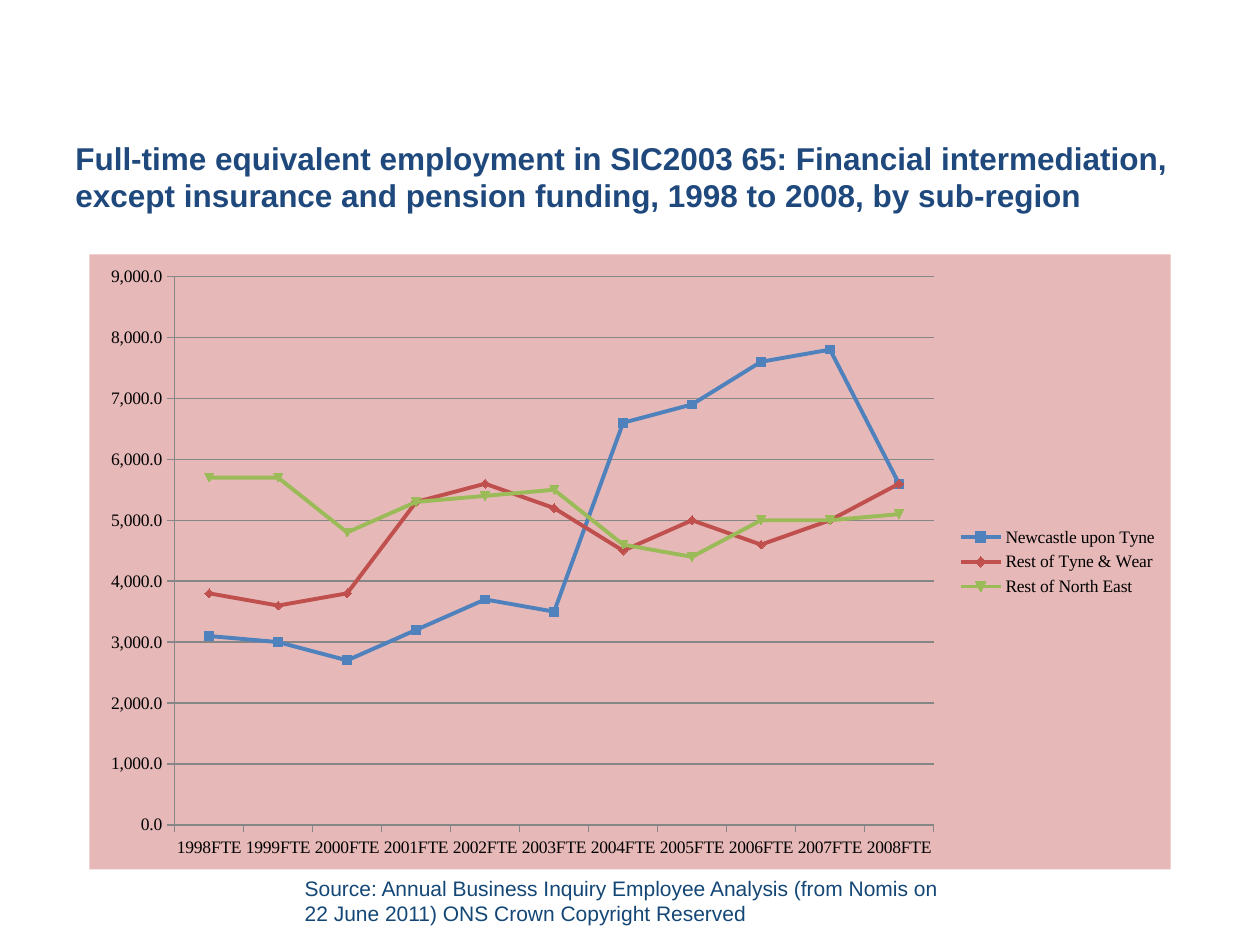
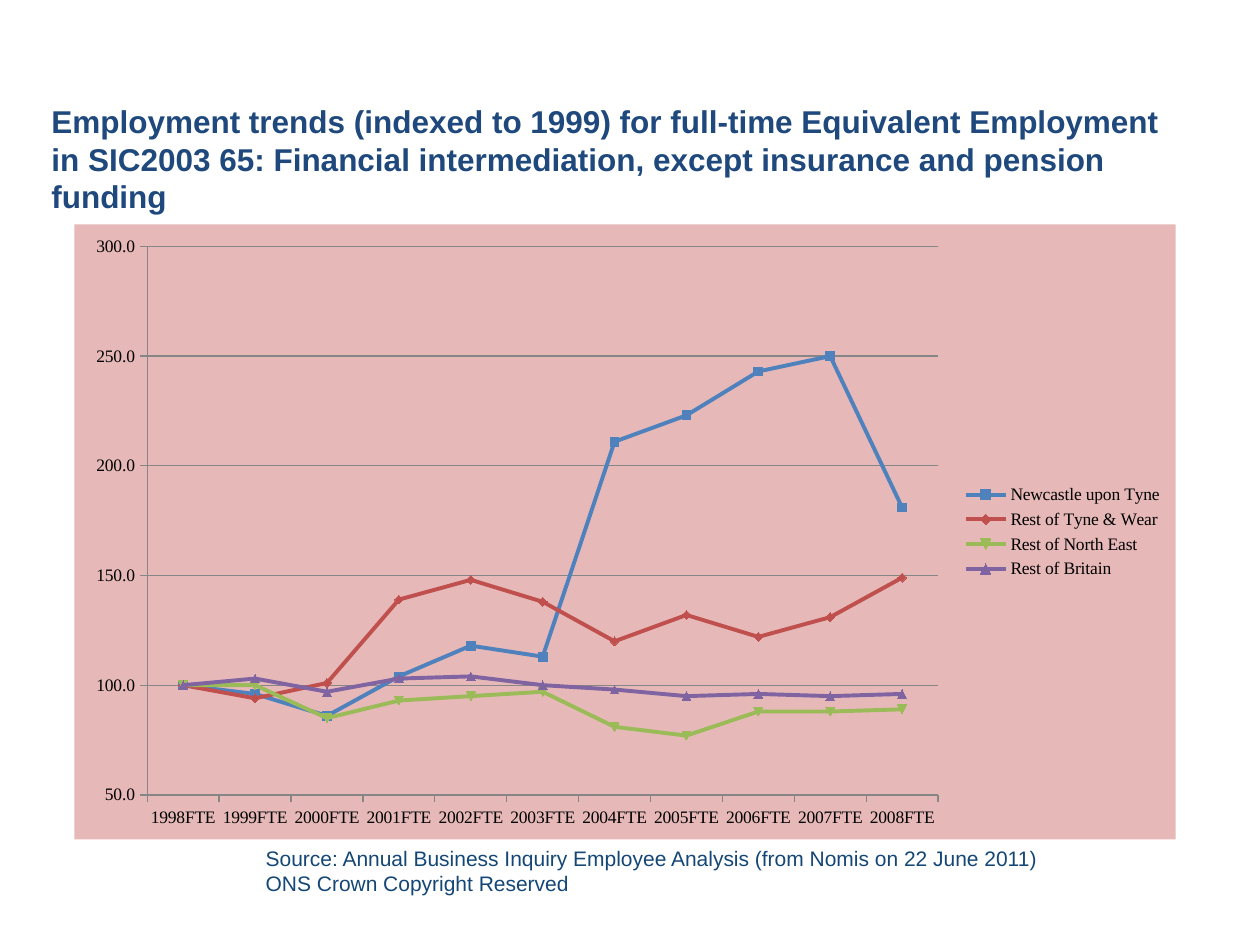
from dataclasses import dataclass
from typing import Any

from lxml import etree
from pptx import Presentation
from pptx import util as u
from pptx.chart import data as cd
from pptx.dml import color as col
from pptx.enum import chart as ce, text as te
from pptx.oxml import ns

Pt = u.Pt


@dataclass(frozen=True)
class Theme:
    title: str = "1F497D"
    source: str = "144776"
    ink: str = "000000"
    rule: str = "868686"
    panel: str = "E6B9B8"
    lines: tuple[str, ...] = ("4F81BD", "C0504D", "9BBB59", "8064A2")
    sans: str = "Arial"
    serif: str = "Times New Roman"
    head: int = 18
    note: int = 12
    label: int = 10


@dataclass(frozen=True)
class Box:
    left: float
    top: float
    width: float
    height: float

    def place(self) -> tuple[int, ...]:
        return tuple(Pt(n) for n in (self.left, self.top, self.width, self.height))


@dataclass(frozen=True)
class Page:
    title: str
    title_box: Box
    rows: tuple[tuple[int, ...], ...]
    chart_box: Box
    scale: dict[str, float]
    source: tuple[str, ...]
    source_box: Box


THEME = Theme()
YEARS = [f"{year}FTE" for year in range(1998, 2009)]
AREAS = ("Newcastle upon Tyne", "Rest of Tyne & Wear",
         "Rest of North East", "Rest of Britain")

PAGES = (
    Page(
        title="Full-time equivalent employment in SIC2003 65: Financial "
              "intermediation, except insurance and pension funding, "
              "1998 to 2008, by sub-region",
        title_box=Box(36, 75.6, 648, 90),
        rows=(
            (3100, 3000, 2700, 3200, 3700, 3500, 6600, 6900, 7600, 7800, 5600),
            (3800, 3600, 3800, 5300, 5600, 5200, 4500, 5000, 4600, 5000, 5600),
            (5700, 5700, 4800, 5300, 5400, 5500, 4600, 4400, 5000, 5000, 5100),
        ),
        chart_box=Box(51.1, 145.4, 617.8, 351.4),
        scale={},
        source=("Source: Annual Business Inquiry Employee Analysis (from Nomis on",
                "22 June 2011) ONS Crown Copyright Reserved"),
        source_box=Box(167, 496.8, 382.3, 36.7),
    ),
    Page(
        title="Employment trends (indexed to 1999) for full-time Equivalent "
              "Employment in SIC2003 65: Financial intermediation, except "
              "insurance and pension funding",
        title_box=Box(22.3, 54.7, 648, 76.3),
        rows=(
            (100, 96, 86, 104, 118, 113, 211, 223, 243, 250, 181),
            (100, 94, 101, 139, 148, 138, 120, 132, 122, 131, 149),
            (100, 100, 85, 93, 95, 97, 81, 77, 88, 88, 89),
            (100, 103, 97, 103, 104, 100, 98, 95, 96, 95, 96),
        ),
        chart_box=Box(42.5, 128.2, 629.3, 351.4),
        scale={"minimum_scale": 50, "maximum_scale": 300},
        source=("Source: Annual Business Inquiry Employee Analysis "
                "(from Nomis on 22 June 2011)",
                "ONS Crown Copyright Reserved"),
        source_box=Box(144.7, 479.5, 462.2, 36.7),
    ),
)


def apply(item: Any, values: dict[str, Any]) -> None:
    for name, value in values.items():
        setattr(item, name, value)


def set_font(font: Any, name: str, size: int, ink: str, bold: bool = False) -> None:
    apply(font, {"name": name, "size": Pt(size), "bold": bold})
    font.color.rgb = col.RGBColor.from_string(ink)


def add_text(slide: Any, box: Box, lines: tuple[str, ...],
             frame: dict[str, Any], font: dict[str, Any]) -> None:
    body = slide.shapes.add_textbox(*box.place()).text_frame
    apply(body, frame)
    body.text = "\n".join(lines)
    for para in body.paragraphs:
        set_font(para.font, THEME.sans, **font)


def area_props(fill: str | None) -> Any:
    """Make borderless chart area properties, clear if no fill is given."""
    props = etree.Element(ns.qn("c:spPr"))
    if fill:
        solid = etree.SubElement(props, ns.qn("a:solidFill"))
        etree.SubElement(solid, ns.qn("a:srgbClr"), val=fill)
    else:
        etree.SubElement(props, ns.qn("a:noFill"))
    line = etree.SubElement(props, ns.qn("a:ln"))
    etree.SubElement(line, ns.qn("a:noFill"))
    return props


def set_line(line: Any, ink: str, width: float) -> None:
    line.color.rgb = col.RGBColor.from_string(ink)
    line.width = Pt(width)


def style_axes(chart: Any, scale: dict[str, float]) -> None:
    for axis in (chart.category_axis, chart.value_axis):
        apply(axis, {"major_tick_mark": ce.XL_TICK_MARK.OUTSIDE,
                     "minor_tick_mark": ce.XL_TICK_MARK.NONE})
        set_line(axis.format.line, THEME.rule, 0.75)
    value = chart.value_axis
    apply(value, {"has_major_gridlines": True, **scale})
    set_line(value.major_gridlines.format.line, THEME.rule, 0.75)
    apply(value.tick_labels, {"number_format": "#,##0.0",
                              "number_format_is_linked": False})


def add_lines(slide: Any, page: Page) -> None:
    data = cd.CategoryChartData(number_format="#,##0.0")
    data.categories = YEARS
    for name, row in zip(AREAS, page.rows):
        data.add_series(name, row)
    chart = slide.shapes.add_chart(
        ce.XL_CHART_TYPE.LINE_MARKERS, *page.chart_box.place(), data).chart
    apply(chart, {"has_title": False, "has_legend": True})
    set_font(chart.font, THEME.serif, THEME.label, THEME.ink)
    apply(chart.legend, {"position": ce.XL_LEGEND_POSITION.RIGHT,
                         "include_in_layout": False})
    style_axes(chart, page.scale)

    plot = chart.plots[0]
    plot.vary_by_categories = False
    for line, ink in zip(plot.series, THEME.lines):
        line.smooth = False
        set_line(line.format.line, ink, 2.25)

    root = chart.element
    root.find(ns.qn("c:txPr")).addprevious(area_props(THEME.panel))
    root.find(".//" + ns.qn("c:plotArea")).append(area_props(None))


def add_page(deck: Any, page: Page) -> None:
    slide = deck.slides.add_slide(deck.slide_layouts[6])
    add_text(slide, page.title_box, (page.title,),
             {"word_wrap": True, "vertical_anchor": te.MSO_ANCHOR.TOP},
             {"size": THEME.head, "ink": THEME.title, "bold": True})
    add_lines(slide, page)
    add_text(slide, page.source_box, page.source,
             {"word_wrap": False, "auto_size": te.MSO_AUTO_SIZE.SHAPE_TO_FIT_TEXT},
             {"size": THEME.note, "ink": THEME.source})


def main() -> None:
    deck = Presentation()
    apply(deck, {"slide_width": Pt(720), "slide_height": Pt(540)})
    for page in PAGES:
        add_page(deck, page)
    deck.save("out.pptx")


if __name__ == "__main__":
    main()
